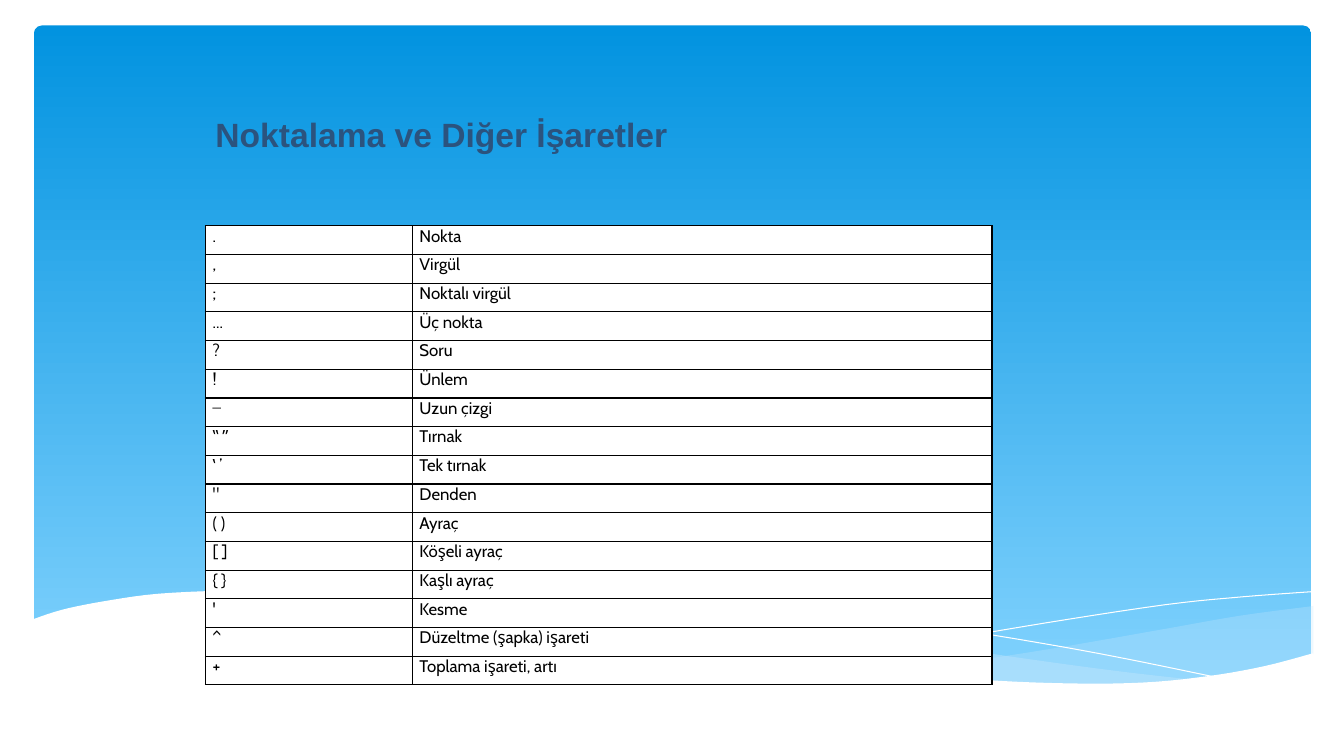
from dataclasses import dataclass

from lxml.etree import SubElement
from pptx import Presentation
from pptx.dml.color import RGBColor as Rgb
from pptx.enum.shapes import MSO_SHAPE as Preset
from pptx.enum.text import MSO_AUTO_SIZE as AutoSize, PP_ALIGN as Align
from pptx.oxml.ns import qn
from pptx.slide import Slide
from pptx.table import _Cell as Cell
from pptx.util import Cm, Pt

Point = tuple[float, float]


@dataclass(frozen=True)
class Theme:
    sky_top: str = "0293E0"
    sky_bottom: str = "83D3FE"
    mist: str = "C6E7FC"
    white: str = "FFFFFF"
    black: str = "000000"
    title: str = "2B537E"
    title_font: str = "Arial"
    body_font: str = "Cabin"
    dash_font: str = "Times New Roman"
    title_size: int = 24
    body_size: int = 12
    border_width: int = 1


@dataclass(frozen=True)
class Wave:
    """A band bounded by smooth edges, or a hairline when opacity is None."""
    edges: tuple[tuple[Point, ...], ...]
    color: str
    opacity: int | None = None


@dataclass(frozen=True)
class Mark:
    sign: str
    name: str
    font: str


THEME = Theme()

WAVES = (
    Wave((((33.1, 15.27), (31.22, 15.52), (29.18, 15.88), (26.42, 16.36),
           (23.93, 16.74), (22.43, 16.94)),
          ((22.43, 16.94), (24.36, 17.12), (26.47, 17.25), (28.63, 17.25),
           (30.43, 17.07), (31.72, 16.84), (33.1, 16.48))), THEME.mist, 29),
    Wave((((9.7, 15.06), (11.13, 14.96), (12.88, 14.91), (14.96, 15.01),
           (17.45, 15.24), (21.34, 15.85), (23.93, 16.31), (26.29, 16.66),
           (28.4, 16.94), (30.28, 17.15)),
          ((30.28, 17.15), (28.75, 17.25), (27, 17.27), (24.94, 17.2),
           (22.56, 16.97), (19.2, 16.51), (15.24, 15.85), (12.29, 15.34),
           (9.7, 15.06))), THEME.mist, 40),
    Wave((((10.49, 15.16), (11.96, 15.01), (14.12, 14.96), (16.59, 15.04),
           (19.71, 15.29), (22.56, 15.62), (25.78, 16.13), (28.17, 16.56),
           (30.76, 17.09)),), THEME.white),
    Wave((((20.8, 16.74), (23.57, 16.18), (26.34, 15.7), (29.36, 15.24),
           (31.32, 15.04), (33.07, 14.91)),), THEME.white),
    Wave((((33.1, 16.46), (31.85, 16.79), (30.43, 17.04), (28.8, 17.2),
           (26.87, 17.22), (24.61, 17.12), (21.92, 16.87), (18.8, 16.43),
           (15.14, 15.8), (12.34, 15.34), (9.91, 15.04), (7.77, 14.91),
           (5.97, 14.88), (4.01, 14.96), (2.57, 15.16), (1.55, 15.37),
           (0.79, 15.62)),
          ((0.79, 18.57), (33.1, 18.57))), THEME.white, 100),
)

MARKS = tuple(
    Mark(sign, name, THEME.dash_font if sign == "–" else THEME.body_font)
    for sign, name in (
        (".", "Nokta"),
        (",", "Virgül"),
        (";", "Noktalı virgül"),
        ("...", "Üç nokta"),
        ("?", "Soru"),
        ("!", "Ünlem"),
        ("–", "Uzun çizgi"),
        ("‟ ˮ", "Tırnak"),
        ("‛ ’", "Tek tırnak"),
        ('"', "Denden"),
        ("( )", "Ayraç"),
        ("[ ]", "Köşeli ayraç"),
        ("{ }", "Kaşlı ayraç"),
        ("'", "Kesme"),
        ("^", "Düzeltme (şapka) işareti"),
        ("+", "Toplama işareti, artı"),
    )
)


def smooth(knots: tuple[Point, ...], steps: int = 5) -> list[Point]:
    """Sample a Catmull-Rom curve that passes through every knot."""
    padded = (knots[0], *knots, knots[-1])
    points = [knots[0]]
    for a, b, c, d in zip(padded, padded[1:], padded[2:], padded[3:]):
        for step in range(1, steps + 1):
            t = step / steps
            x, y = (
                (2 * q + (r - p) * t + (2 * p - 5 * q + 4 * r - s) * t**2
                 + (3 * q - p - 3 * r + s) * t**3) / 2
                for p, q, r, s in zip(a, b, c, d)
            )
            points.append((x, y))
    return points


def add_sky(slide: Slide) -> None:
    sky = slide.shapes.add_shape(
        Preset.ROUNDED_RECTANGLE, Cm(0.85), Cm(0.64), Cm(32.2), Cm(16.76))
    sky.adjustments[0] = 0.013
    sky.shadow.inherit = False
    sky.line.fill.background()
    sky.fill.gradient()
    sky.fill.gradient_angle = 270
    for stop, color in zip(sky.fill.gradient_stops, (THEME.sky_top, THEME.sky_bottom)):
        stop.color.rgb = Rgb.from_string(color)


def add_wave(slide: Slide, wave: Wave) -> None:
    points = [(Cm(x), Cm(y)) for edge in wave.edges for x, y in smooth(edge)]
    is_band = wave.opacity is not None
    builder = slide.shapes.build_freeform(*points[0])
    builder.add_line_segments(points[1:], close=is_band)
    shape = builder.convert_to_shape()
    shape.shadow.inherit = False
    if not is_band:
        shape.fill.background()
        shape.line.color.rgb = Rgb.from_string(wave.color)
        shape.line.width = Pt(0)
        return
    shape.line.fill.background()
    shape.fill.solid()
    shape.fill.fore_color.rgb = Rgb.from_string(wave.color)
    if wave.opacity < 100:
        color = shape._element.spPr.find(f"{qn('a:solidFill')}/{qn('a:srgbClr')}")
        SubElement(color, qn("a:alpha"), val=str(wave.opacity * 1000))


def add_title(slide: Slide) -> None:
    box = slide.shapes.add_textbox(Cm(5.18), Cm(2.74), Cm(13.77), Cm(1.27))
    box.text_frame.word_wrap = True
    box.text_frame.auto_size = AutoSize.SHAPE_TO_FIT_TEXT
    para = box.text_frame.paragraphs[0]
    para.text = "Noktalama ve Diğer İşaretler"
    para.font.name = THEME.title_font
    para.font.size = Pt(THEME.title_size)
    para.font.bold = True
    para.font.color.rgb = Rgb.from_string(THEME.title)


def fill_cell(cell: Cell, text: str, font: str) -> None:
    properties = cell._tc.get_or_add_tcPr()
    for side in ("lnL", "lnR", "lnT", "lnB"):
        border = SubElement(properties, qn(f"a:{side}"), w=str(Pt(THEME.border_width)))
        SubElement(SubElement(border, qn("a:solidFill")), qn("a:srgbClr"), val=THEME.black)
    cell.fill.solid()
    cell.fill.fore_color.rgb = Rgb.from_string(THEME.white)
    cell.margin_left = cell.margin_right = Cm(0.18)
    cell.margin_top = cell.margin_bottom = Cm(0)
    para = cell.text_frame.paragraphs[0]
    para.text = text
    para.alignment = Align.JUSTIFY
    para.space_before = Pt(4)
    para.font.name = font
    para.font.size = Pt(THEME.body_size)
    para.font.color.rgb = Rgb.from_string(THEME.black)


def add_marks_table(slide: Slide) -> None:
    table = slide.shapes.add_table(
        len(MARKS), 2, Cm(5.18), Cm(5.69), Cm(19.82), Cm(11.58)).table
    table.first_row = table.horz_banding = False
    table.columns[0].width, table.columns[1].width = Cm(5.21), Cm(14.61)
    for row, mark in enumerate(MARKS):
        fill_cell(table.cell(row, 0), mark.sign, mark.font)
        fill_cell(table.cell(row, 1), mark.name, THEME.body_font)


def main() -> None:
    deck = Presentation()
    deck.slide_width, deck.slide_height = Cm(33.87), Cm(19.05)
    slide = deck.slides.add_slide(deck.slide_layouts[6])
    add_sky(slide)
    for wave in WAVES:
        add_wave(slide, wave)
    add_title(slide)
    add_marks_table(slide)
    deck.save("out.pptx")


if __name__ == "__main__":
    main()
